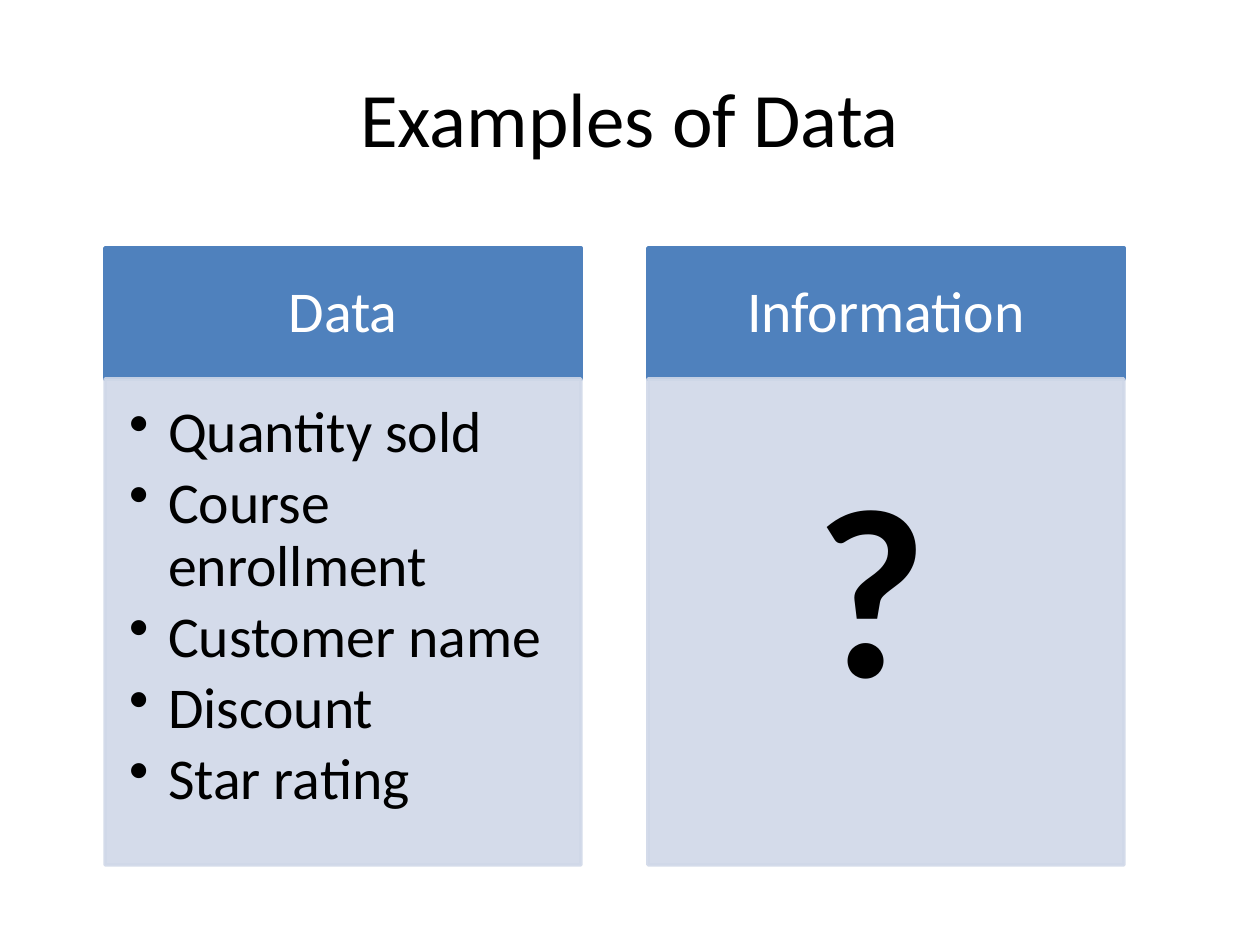
import pptx
import pptx.dml.color
import pptx.enum.shapes
import pptx.enum.text
import pptx.oxml.ns
import pptx.util
from lxml import etree

EMU_PER_PX = 914400 // 126
BLACK = pptx.dml.color.RGBColor(0x00, 0x00, 0x00)
WHITE = pptx.dml.color.RGBColor(0xFF, 0xFF, 0xFF)
HEADER_BLUE = pptx.dml.color.RGBColor(0x4F, 0x81, 0xBD)
PALE_BLUE = pptx.dml.color.RGBColor(0xD0, 0xD8, 0xE8)
CENTER = pptx.enum.text.PP_ALIGN.CENTER
LEFT = pptx.enum.text.PP_ALIGN.LEFT
MIDDLE = pptx.enum.text.MSO_ANCHOR.MIDDLE
TOP = pptx.enum.text.MSO_ANCHOR.TOP


def px(length):
    return pptx.util.Emu(length * EMU_PER_PX)


class SlideBuilder:
    """Hold the text style and current slide, and add each kind of element."""

    font_name = "Calibri"
    body_size = 33
    bullet_indent = 39
    line_width = 2

    def __init__(self, slide):
        self.slide = slide

    def frame(self, owner, insets, anchor, wrap=True):
        frame = owner.text_frame
        frame.word_wrap = wrap
        frame.vertical_anchor = anchor
        (frame.margin_left, frame.margin_top,
         frame.margin_right, frame.margin_bottom) = map(px, insets)
        return frame

    def add_text(self, paragraph, text, size, color, align=LEFT, bold=False):
        paragraph.alignment = align
        run = paragraph.add_run()
        run.text = text
        run.font.name = self.font_name
        run.font.size = pptx.util.Pt(size)
        run.font.bold = bold
        run.font.color.rgb = color

    def label(self, box, text, size, align=LEFT, anchor=TOP, bold=False, wrap=True):
        textbox = self.slide.shapes.add_textbox(*map(px, box))
        frame = self.frame(textbox, (13, 6, 13, 6), anchor, wrap)
        self.add_text(frame.paragraphs[0], text, size, BLACK, align, bold)

    def panel(self, box, color, opacity=100):
        panel = self.slide.shapes.add_shape(
            pptx.enum.shapes.MSO_SHAPE.RECTANGLE, *map(px, box))
        panel.shadow.inherit = False
        panel.fill.solid()
        panel.fill.fore_color.rgb = color
        panel.line.color.rgb = color
        panel.line.width = pptx.util.Pt(self.line_width)
        if opacity < 100:
            for tint in panel.element.spPr.iter(pptx.oxml.ns.qn("a:srgbClr")):
                etree.SubElement(tint, pptx.oxml.ns.qn("a:alpha"), val=str(opacity * 1000))
        return panel

    def header(self, box, text):
        frame = self.frame(self.panel(box, HEADER_BLUE), (33, 19, 33, 19), MIDDLE)
        paragraph = frame.paragraphs[0]
        paragraph.line_spacing = 0.9
        self.add_text(paragraph, text, self.body_size, WHITE, CENTER)

    def bullet_panel(self, box, items):
        frame = self.frame(self.panel(box, PALE_BLUE, 90), (24, 24, 33, 37), TOP)
        for index, item in enumerate(items):
            paragraph = frame.add_paragraph() if index else frame.paragraphs[0]
            paragraph.line_spacing = 0.9
            paragraph.space_after = pptx.util.Pt(5)
            self.add_text(paragraph, item, self.body_size, BLACK)
            properties = paragraph._p.get_or_add_pPr()
            properties.set("marL", str(px(self.bullet_indent)))
            properties.set("indent", str(-px(self.bullet_indent)))
            etree.SubElement(properties, pptx.oxml.ns.qn("a:buChar"), char="•")


def main():
    presentation = pptx.Presentation()
    presentation.slide_width = pptx.util.Inches(10)
    presentation.slide_height = pptx.util.Inches(7.5)
    builder = SlideBuilder(presentation.slides.add_slide(presentation.slide_layouts[6]))

    builder.label((63, 38, 1134, 158), "Examples of Data", 44, CENTER, MIDDLE)

    columns = [
        ("Data", ["Quantity sold", "Course enrollment", "Customer name",
                  "Discount", "Star rating"]),
        ("Information", []),
    ]
    first_left, column_pitch, column_width = 105, 543, 476
    for index, (heading, items) in enumerate(columns):
        left = first_left + index * column_pitch
        builder.header((left, 248, column_width, 131), heading)
        builder.bullet_panel((left, 379, column_width, 486), items)

    builder.label((803, 430, 174, 305), "?", 138, bold=True, wrap=False)
    presentation.save("out.pptx")


if __name__ == "__main__":
    main()
